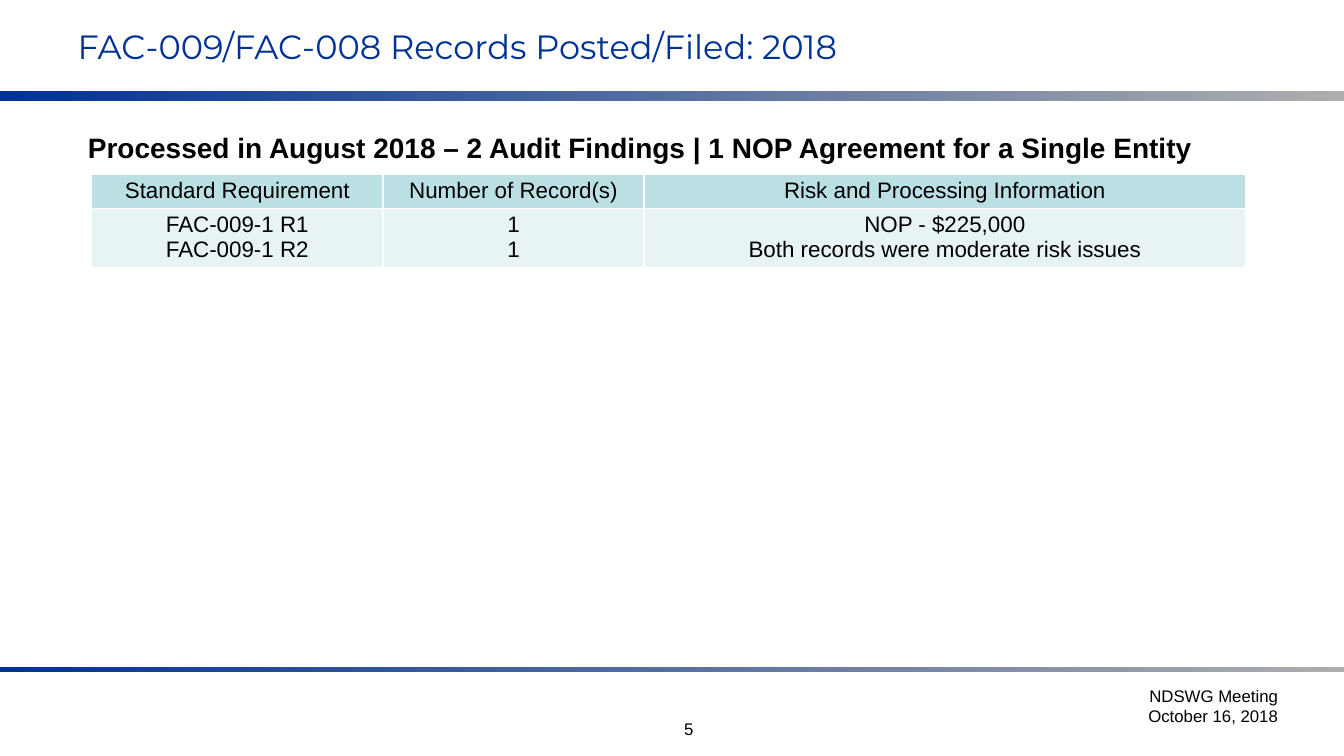
"""Build the slide of FAC-009/FAC-008 records posted or filed in 2018."""
from dataclasses import dataclass

from lxml import etree
from pptx import Presentation
from pptx.dml.color import RGBColor
from pptx.enum import shapes, text
from pptx.oxml import ns
from pptx.util import Cm, Pt

TITLE = "FAC-009/FAC-008 Records Posted/Filed: 2018"
SUMMARY = "Processed in August 2018 – 2 Audit Findings | 1 NOP Agreement for a Single Entity"
RECORDS = [
    ("Standard Requirement", "Number of Record(s)", "Risk and Processing Information"),
    ("FAC-009-1 R1\nFAC-009-1 R2", "1\n1", "NOP - $225,000\nBoth records were moderate risk issues"),
]
MEETING = "NDSWG Meeting\nOctober 16, 2018"
PAGE_NUMBER = "5"

SLIDE_SIZE = (33.87, 19.05)
TITLE_AREA = (1.7, 0.2, 31.04, 1.9)
SUMMARY_AREA = (1.96, 3.15, 30.5, 10.2)
MEETING_AREA = (23.14, 17.15, 9.32, 1.9)
NUMBER_AREA = (12.7, 17.98, 9.32, 1.07)
RULES = [(2.29, 0.25), (16.81, 0.13)]
TABLE_CORNER = (2.31, 4.4)
COLUMN_WIDTHS = (7.34, 6.58, 15.16)
ROW_HEIGHTS = (0.85, 1.5)
CELL_MARGIN = 0.1


@dataclass(frozen=True)
class Theme:
    """Colours, fonts and type sizes of the slide."""
    blue: str = "003296"
    grey: str = "ADADAD"
    black: str = "000000"
    border: str = "FFFFFF"
    rows: tuple = ("BBE0E3", "E7F3F4")
    heading_font: str = "Montserrat"
    body_font: str = "Arial"
    title_size: int = 24
    summary_size: int = 20
    table_size: int = 16
    footer_size: int = 12


THEME = Theme()
ALIGN = text.PP_ALIGN


def place(box, area):
    """Move and size a box in centimetres."""
    box.left, box.top, box.width, box.height = map(Cm, area)


def write(frame, words, size, align, color=THEME.black, font=THEME.body_font, bold=False):
    """Fill a text frame and format every run."""
    frame.text = words
    for para in frame.paragraphs:
        para.alignment = align
        para.space_before = Pt(0)
        for span in para.runs:
            span.font.size = Pt(size)
            span.font.name = font
            span.font.bold = bold
            span.font.color.rgb = RGBColor.from_string(color)


def add_rule(page, top, height):
    """Draw a full-width gradient bar."""
    bar = page.shapes.add_shape(
        shapes.MSO_SHAPE.RECTANGLE, 0, Cm(top), Cm(SLIDE_SIZE[0]), Cm(height))
    bar.shadow.inherit = False
    bar.line.fill.background()
    bar.fill.gradient()
    bar.fill.gradient_angle = 0
    for stop, color in zip(bar.fill.gradient_stops, (THEME.blue, THEME.grey)):
        stop.color.rgb = RGBColor.from_string(color)


def add_footer(page, area, words, align):
    """Add a small text box at the foot of the slide."""
    box = page.shapes.add_textbox(*map(Cm, area))
    box.text_frame.word_wrap = True
    write(box.text_frame, words, THEME.footer_size, align)


def add_borders(cell):
    """Give a cell a thin border on all sides."""
    properties = cell._tc.get_or_add_tcPr()
    for side in ("lnL", "lnR", "lnT", "lnB"):
        line = etree.SubElement(properties, ns.qn(f"a:{side}"), w=str(Pt(1)))
        fill = etree.SubElement(line, ns.qn("a:solidFill"))
        etree.SubElement(fill, ns.qn("a:srgbClr"), val=THEME.border)


def add_records(page):
    """Add the table of records."""
    size = (sum(COLUMN_WIDTHS), sum(ROW_HEIGHTS))
    table = page.shapes.add_table(
        len(RECORDS), len(COLUMN_WIDTHS), *map(Cm, TABLE_CORNER + size)).table
    for column, width in zip(table.columns, COLUMN_WIDTHS):
        column.width = Cm(width)
    for row, height, color, entries in zip(table.rows, ROW_HEIGHTS, THEME.rows, RECORDS):
        row.height = Cm(height)
        for cell, words in zip(row.cells, entries):
            cell.margin_top = cell.margin_bottom = Cm(CELL_MARGIN)
            add_borders(cell)
            cell.fill.solid()
            cell.fill.fore_color.rgb = RGBColor.from_string(color)
            write(cell.text_frame, words, THEME.table_size, ALIGN.CENTER)


def main():
    """Compose and save the slide."""
    deck = Presentation()
    deck.slide_width, deck.slide_height = map(Cm, SLIDE_SIZE)
    page = deck.slides.add_slide(deck.slide_layouts[1])
    for top, height in RULES:
        add_rule(page, top, height)

    title, summary = page.placeholders
    for box, area in ((title, TITLE_AREA), (summary, SUMMARY_AREA)):
        place(box, area)
        box.text_frame.auto_size = text.MSO_AUTO_SIZE.NONE
    title.text_frame.vertical_anchor = text.MSO_ANCHOR.MIDDLE
    write(title.text_frame, TITLE, THEME.title_size, ALIGN.LEFT, THEME.blue, THEME.heading_font)
    write(summary.text_frame, SUMMARY, THEME.summary_size, ALIGN.LEFT, bold=True)
    layout = summary.text_frame.paragraphs[0]._p.get_or_add_pPr()
    layout.set("marL", "0")
    layout.set("indent", "0")
    etree.SubElement(layout, ns.qn("a:buNone"))

    add_records(page)
    add_footer(page, MEETING_AREA, MEETING, ALIGN.RIGHT)
    add_footer(page, NUMBER_AREA, PAGE_NUMBER, ALIGN.CENTER)
    deck.save("out.pptx")


if __name__ == "__main__":
    main()
